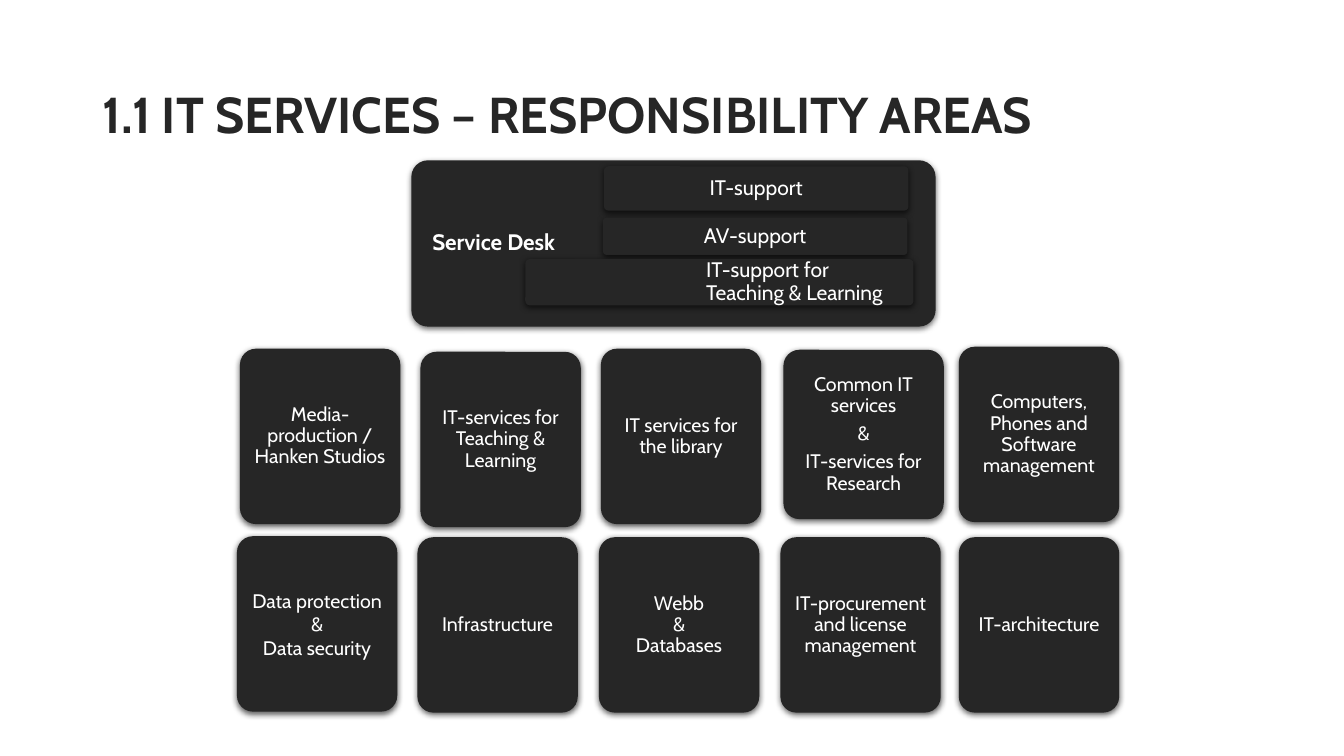
"""Build the IT services responsibility areas slide."""
from dataclasses import dataclass

from lxml.etree import SubElement
from pptx import Presentation
from pptx.dml.color import RGBColor
from pptx.enum.shapes import MSO_SHAPE
from pptx.enum.text import MSO_ANCHOR, PP_ALIGN
from pptx.oxml.ns import qn
from pptx.util import Inches, Pt


@dataclass(frozen=True)
class Theme:
    font: str = "Cabin"
    dark: RGBColor = RGBColor(0x26, 0x26, 0x26)
    light: RGBColor = RGBColor(0xFF, 0xFF, 0xFF)
    title: int = 36
    desk: int = 16
    bar: int = 15
    card: int = 14
    leading: float = 0.9
    inset: float = 0.06


THEME = Theme()
TITLE = "1.1 IT SERVICES – RESPONSIBILITY AREAS"
TITLE_BOX = (0.92, 0.84, 11.03, 0.78)
DESK = ("Service Desk", (4.08, 1.59, 5.2, 1.65), 0.16)
BARS = [
    ("IT-support", (5.99, 1.65, 3.02, 0.44), None),
    ("AV-support", (5.98, 2.16, 3.02, 0.37), None),
    ("IT-support for\nTeaching & Learning", (5.21, 2.57, 3.85, 0.46), 1.78),
]
CARD_W, CARD_H, PITCH = 1.59, 1.74, 1.79
# Each card: paragraphs, horizontal nudge, vertical nudge, height change
ROWS = [
    (2.38, 3.46, [
        (["Media-production / Hanken Studios"], 0, 0, 0),
        (["IT-services for Teaching & Learning"], 0, 0.03, 0),
        (["IT services for the library"], 0, 0, 0),
        (["Common IT services", "&", "IT-services for Research"], 0.02, 0.01, -0.06),
        (["Computers, Phones and Software management"], -0.03, -0.02, 0),
    ]),
    (2.35, 5.33, [
        (["Data protection\n&", "Data security"], 0, -0.01, 0),
        (["Infrastructure"], 0, 0, 0),
        (["Webb\n&\nDatabases"], 0.01, 0, 0),
        (["IT-procurement and license management"], 0.02, 0, 0),
        (["IT-architecture"], 0, 0, 0),
    ]),
]
LOOSE = "Data security"


def write(tf, paragraphs, size, color, align, bold=False, leading=THEME.leading, after=0):
    """Fill a text frame with evenly styled paragraphs."""
    tf.word_wrap = True
    for i, text in enumerate(paragraphs):
        p = tf.paragraphs[0] if i == 0 else tf.add_paragraph()
        p.text = text
        p.alignment = align
        p.line_spacing = leading
        p.space_after = Pt(after)
        p.font.name, p.font.size, p.font.bold = THEME.font, Pt(size), bold
        p.font.color.rgb = color


def add_shadow(s):
    """Give a shape a soft shadow straight below it."""
    s.shadow.inherit = False
    effects = s._element.spPr.find(qn("a:effectLst"))
    shadow = SubElement(effects, qn("a:outerShdw"), blurRad=str(Pt(4.5)),
                        dist=str(Pt(1.5)), dir="5400000", algn="ctr", rotWithShape="0")
    black = SubElement(shadow, qn("a:srgbClr"), val="000000")
    SubElement(black, qn("a:alpha"), val="63000")


def add_panel(slide, box, paragraphs, size, left=None, **style):
    """Add a dark rounded panel; a left inset makes its text left-aligned."""
    s = slide.shapes.add_shape(MSO_SHAPE.ROUNDED_RECTANGLE, *map(Inches, box))
    s.adjustments[0] = 0.1
    s.fill.solid()
    s.fill.fore_color.rgb = THEME.dark
    s.line.fill.background()
    add_shadow(s)
    tf = s.text_frame
    tf.vertical_anchor = MSO_ANCHOR.MIDDLE
    tf.margin_top = tf.margin_right = tf.margin_bottom = Inches(THEME.inset)
    tf.margin_left = Inches(left or THEME.inset)
    align = PP_ALIGN.LEFT if left else PP_ALIGN.CENTER
    write(tf, paragraphs, size, THEME.light, align, **style)


def main():
    prs = Presentation()
    prs.slide_width, prs.slide_height = Inches(13.33), Inches(7.5)
    slide = prs.slides.add_slide(prs.slide_layouts[6])

    title = slide.shapes.add_textbox(*map(Inches, TITLE_BOX))
    write(title.text_frame, [TITLE], THEME.title, THEME.dark, PP_ALIGN.LEFT, bold=True)

    for x, y, cards in ROWS:
        for col, (paragraphs, dx, dy, dh) in enumerate(cards):
            box = (x + col * PITCH + dx, y + dy, CARD_W, CARD_H + dh)
            loose = LOOSE in paragraphs
            add_panel(slide, box, paragraphs, THEME.card,
                      leading=1.0 if loose else THEME.leading, after=0 if loose else 5)

    text, box, left = DESK
    add_panel(slide, box, [text], THEME.desk, left, bold=True)
    for text, box, left in BARS:
        add_panel(slide, box, [text], THEME.bar, left)

    prs.save("out.pptx")


if __name__ == "__main__":
    main()
